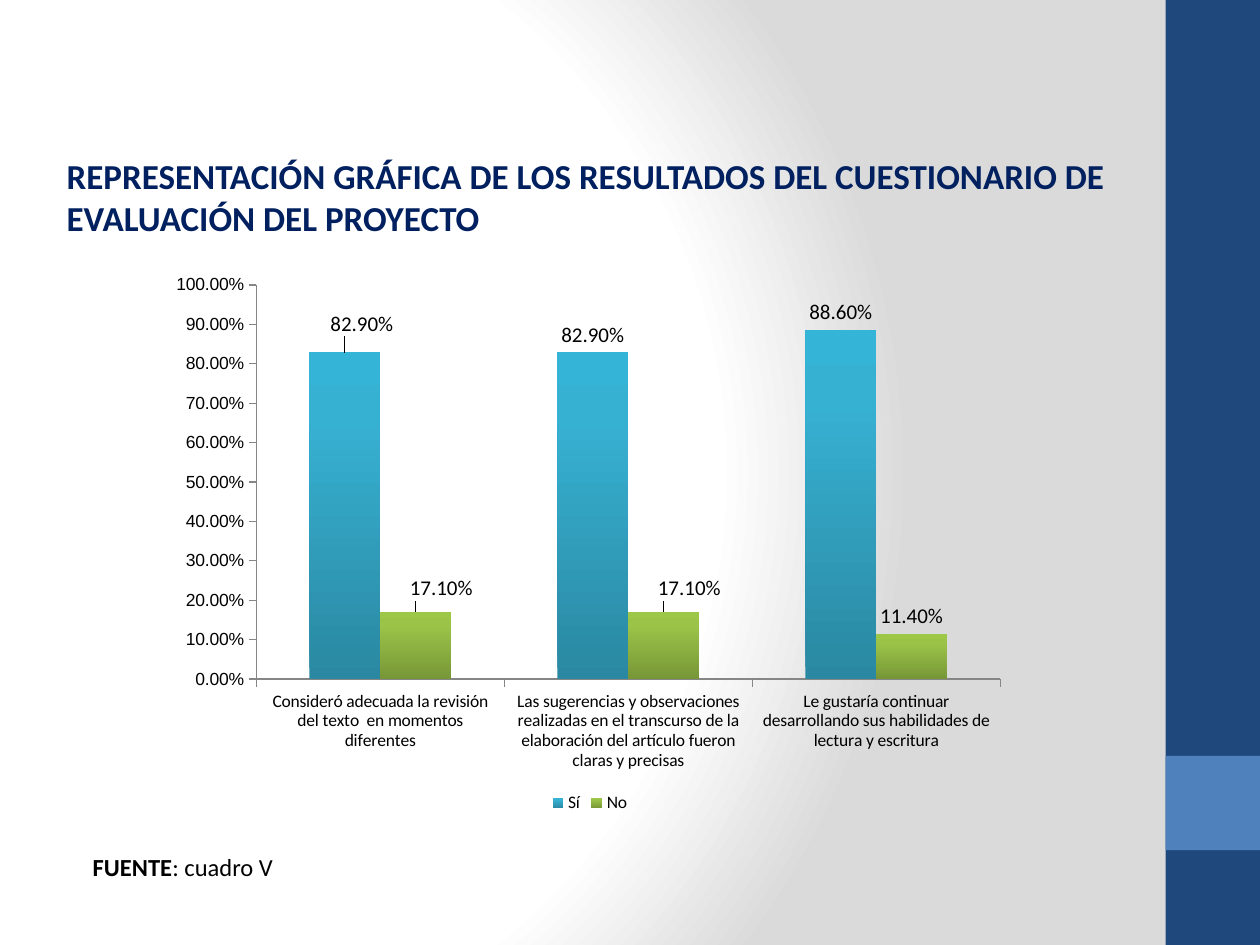
from pptx import Presentation
from pptx import util as u
from pptx.chart import data as chart_data
from pptx.dml.color import RGBColor
from pptx.enum import chart as chart_enum, shapes, text
from pptx.oxml import parse_xml
from pptx.oxml.ns import nsdecls, qn

SLIDE = (25.4, 19.05)
BANDS = [
    (23.5, 0, 1.9, 19.05, "1F497D"),
    (23.5, 15.24, 1.9, 1.9, "4F81BD"),
]
TITLE = [
    [("REPRESENTACIÓN GRÁFICA DE LOS RESULTADOS DEL CUESTIONARIO DE", True)],
    [("EVALUACIÓN DEL PROYECTO", True)],
]
TITLE_BOX = (1.09, 2.99, 21.77, 1.96)
SOURCE = [[("FUENTE", True), (": cuadro V", False)]]
SOURCE_BOX = (1.62, 17.06, 4.17, 0.86)

CHART_BOX = (3.27, 5.3, 17.24, 11.19)
PLOT_AREA = {"x": 0.11, "y": 0.04, "w": 0.87, "h": 0.71}
CATEGORIES = [
    "Consideró adecuada la revisión del texto  en momentos diferentes",
    "Las sugerencias y observaciones realizadas en el transcurso de la "
    "elaboración del artículo fueron claras y precisas",
    "Le gustaría continuar desarrollando sus habilidades de lectura y escritura",
]
SERIES = [
    {"name": "Sí", "values": [0.829, 0.829, 0.886],
     "stops": [(0, "2A88A2"), (80, "37B1D2"), (100, "34B4D6")],
     "moved": {0: (0.02, -0.02)}},
    {"name": "No", "values": [0.171, 0.171, 0.114],
     "stops": [(0, "779737"), (80, "9BC348"), (100, "9DC746")],
     "moved": {0: (0.03, -0.01), 1: (0.03, -0.01)}},
]
BACKGROUND = [(0, "FFFFFF"), (75, "FFFFFF"), (100, "DADADA")]
RADIAL = ('<a:path path="circle"><a:fillToRect l="20000" t="50000" '
          'r="100000" b="50000"/></a:path>')
UPWARD = '<a:lin ang="16200000" scaled="0"/>'
NO_LEADERS = (
    f'<c:extLst {nsdecls("c")}><c:ext uri="{{CE6537A1-D6FC-4f65-9D91-7224C49458BB}}" '
    'xmlns:c15="http://schemas.microsoft.com/office/drawing/2012/chart">'
    '<c15:showLeaderLines val="0"/></c:ext></c:extLst>')
PERCENT = "0.00%"


def color(value):
    return RGBColor.from_string(value)


def place(values):
    return [u.Cm(value) for value in values]


def paint_gradient(owner, fill, stops, direction):
    fill.solid()
    fill.fore_color.rgb = color(stops[0][1])
    solid = next(owner.iter(qn("a:solidFill")))
    marks = "".join(
        f'<a:gs pos="{pos * 1000}"><a:srgbClr val="{value}"/></a:gs>'
        for pos, value in stops)
    solid.getparent().replace(solid, parse_xml(
        f'<a:gradFill {nsdecls("a")} rotWithShape="1">'
        f'<a:gsLst>{marks}</a:gsLst>{direction}</a:gradFill>'))


def manual_layout(values, inner=False):
    target = '<c:layoutTarget val="inner"/>' if inner else ""
    modes = '<c:xMode val="edge"/><c:yMode val="edge"/>' if inner else ""
    sizes = "".join(f'<c:{key} val="{value}"/>' for key, value in values.items())
    return parse_xml(
        f'<c:layout {nsdecls("c")}><c:manualLayout>{target}{modes}{sizes}'
        f'</c:manualLayout></c:layout>')


def write(box, paragraphs, size, hue):
    frame = box.text_frame
    frame.word_wrap = False
    frame.auto_size = text.MSO_AUTO_SIZE.SHAPE_TO_FIT_TEXT
    frame.vertical_anchor = text.MSO_ANCHOR.TOP
    for index, runs in enumerate(paragraphs):
        para = frame.add_paragraph() if index else frame.paragraphs[0]
        para.alignment = text.PP_ALIGN.LEFT
        for words, bold in runs:
            span = para.add_run()
            span.text = words
            span.font.name = "Calibri"
            span.font.size = u.Pt(size)
            span.font.bold = bold
            span.font.color.rgb = color(hue)


def style_labels(series, moved):
    labels = series.data_labels
    labels.show_value = True
    labels.number_format = PERCENT
    labels.number_format_is_linked = False
    labels.position = chart_enum.XL_LABEL_POSITION.OUTSIDE_END
    labels.font.size = u.Pt(12)
    for index, (dx, dy) in moved.items():
        label = series.points[index].data_label
        label.font.size = u.Pt(12)
        label.position = chart_enum.XL_LABEL_POSITION.OUTSIDE_END
        mark = series._element.xpath(f'c:dLbls/c:dLbl/c:idx[@val="{index}"]')[0]
        mark.addnext(manual_layout({"x": dx, "y": dy}))
    group = series._element.find(qn("c:dLbls"))
    for leader in group.findall(qn("c:showLeaderLines")):
        group.remove(leader)
    group.append(parse_xml(NO_LEADERS))


def add_results_chart(slide):
    data = chart_data.CategoryChartData(number_format=PERCENT)
    data.categories = CATEGORIES
    for item in SERIES:
        data.add_series(item["name"], item["values"])
    chart = slide.shapes.add_chart(
        chart_enum.XL_CHART_TYPE.COLUMN_CLUSTERED, *place(CHART_BOX), data).chart
    chart.has_title = False
    chart.font.name = "Calibri"
    chart.font.size = u.Pt(18)
    chart.font.color.rgb = color("000000")
    chart.has_legend = True
    chart.legend.position = chart_enum.XL_LEGEND_POSITION.BOTTOM
    chart.legend.include_in_layout = False
    chart.legend.font.size = u.Pt(10)

    for axis in (chart.category_axis, chart.value_axis):
        axis.has_major_gridlines = False
        axis.major_tick_mark = chart_enum.XL_TICK_MARK.OUTSIDE
        axis.tick_labels.font.size = u.Pt(10)
        axis.format.line.color.rgb = color("868686")
    scale = chart.value_axis
    scale.minimum_scale, scale.maximum_scale, scale.major_unit = 0, 1, 0.1
    scale.tick_labels.font.name = "Arial"
    scale.tick_labels.number_format = PERCENT
    scale.tick_labels.number_format_is_linked = False

    plot = chart.plots[0]
    plot.gap_width, plot.overlap, plot.vary_by_categories = 150, 0, False
    for series, item in zip(plot.series, SERIES):
        paint_gradient(series._element, series.format.fill, item["stops"], UPWARD)
        style_labels(series, item["moved"])
    area = chart._chartSpace.chart.plotArea
    for layout in area.findall(qn("c:layout")):
        area.remove(layout)
    area.insert(0, manual_layout(PLOT_AREA, inner=True))


def main():
    """Build the slide with the questionnaire results chart."""
    deck = Presentation()
    deck.slide_width, deck.slide_height = place(SLIDE)
    slide = deck.slides.add_slide(deck.slide_layouts[5])
    paint_gradient(slide._element, slide.background.fill, BACKGROUND, RADIAL)

    for *bounds, hue in BANDS:
        band = slide.shapes.add_shape(shapes.MSO_SHAPE.RECTANGLE, *place(bounds))
        band.shadow.inherit = False
        band.fill.solid()
        band.fill.fore_color.rgb = color(hue)
        band.line.fill.background()

    add_results_chart(slide)
    title = slide.shapes.title
    title.left, title.top, title.width, title.height = place(TITLE_BOX)
    write(title, TITLE, 20, "002060")
    write(slide.shapes.add_textbox(*place(SOURCE_BOX)), SOURCE, 14, "000000")
    deck.save("out.pptx")


if __name__ == "__main__":
    main()
